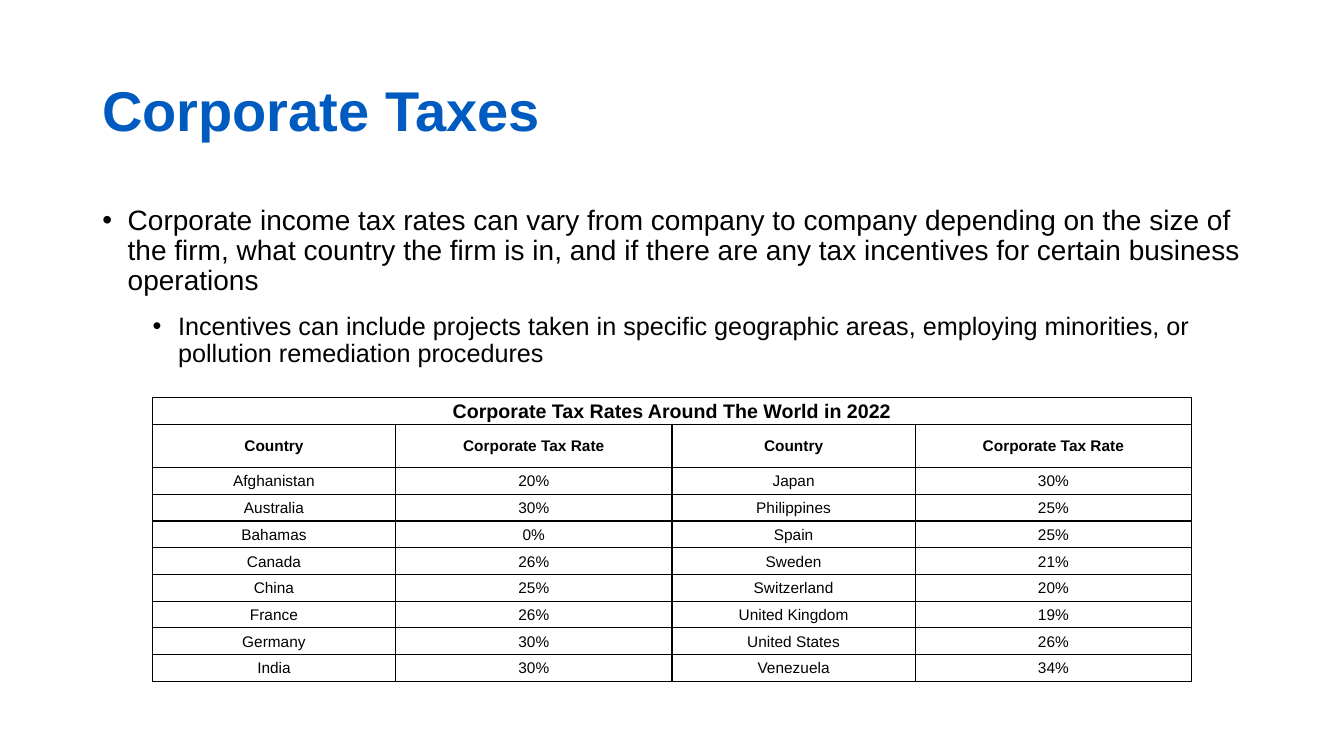
import pptx
import pptx.dml.color
import pptx.enum.text
import pptx.oxml
import pptx.oxml.ns
import pptx.util

Cm = pptx.util.Cm
Pt = pptx.util.Pt
ALIGN = pptx.enum.text.PP_ALIGN
ANCHOR = pptx.enum.text.MSO_ANCHOR
BLACK = "000000"
BLUE = "005BC0"

POINTS = [
    ("Corporate income tax rates can vary from company to company depending on the size of "
     "the firm, what country the firm is in, and if there are any tax incentives for certain "
     "business operations", 20),
    ("Incentives can include projects taken in specific geographic areas, employing "
     "minorities, or pollution remediation procedures", 18),
]
HEADING = "Corporate Tax Rates Around The World in 2022"
HEADS = ["Country", "Corporate Tax Rate"] * 2
RATES = [
    ["Afghanistan", "20%", "Japan", "30%"],
    ["Australia", "30%", "Philippines", "25%"],
    ["Bahamas", "0%", "Spain", "25%"],
    ["Canada", "26%", "Sweden", "21%"],
    ["China", "25%", "Switzerland", "20%"],
    ["France", "26%", "United Kingdom", "19%"],
    ["Germany", "30%", "United States", "26%"],
    ["India", "30%", "Venezuela", "34%"],
]


def color(code):
    """Return the colour for a hex string."""
    return pptx.dml.color.RGBColor.from_string(code)


def write(para, text, size=11, bold=False, tint=BLACK, align=ALIGN.LEFT, lead=1.0, before=0):
    """Put formatted text into a paragraph."""
    para.alignment = align
    para.line_spacing = lead
    para.space_before = Pt(before)
    run = para.add_run()
    run.text = text
    run.font.name = "Arial"
    run.font.size = Pt(size)
    run.font.bold = bold
    run.font.color.rgb = color(tint)


def frame(slide, box, anchor):
    """Add a wrapping text box and return its text frame."""
    area = slide.shapes.add_textbox(*map(Cm, box)).text_frame
    area.word_wrap = True
    area.vertical_anchor = anchor
    return area


def title(slide, box):
    """Place the slide title in the box."""
    area = frame(slide, box, ANCHOR.MIDDLE)
    write(area.paragraphs[0], "Corporate Taxes", size=40, bold=True, tint=BLUE, lead=0.9)


def bullet(para, level):
    """Give a paragraph a hanging bullet at its level."""
    para.level = level
    props = para._p.get_or_add_pPr()
    props.set("marL", str(Cm(0.64 + 1.27 * level)))
    props.set("indent", str(-Cm(0.64)))
    space = pptx.oxml.ns.nsdecls("a")
    props.append(pptx.oxml.parse_xml(f'<a:buFont {space} typeface="Arial"/>'))
    props.append(pptx.oxml.parse_xml(f'<a:buChar {space} char="•"/>'))


def body(slide, box):
    """Place the bullet points in the box."""
    area = frame(slide, box, ANCHOR.TOP)
    for level, (text, size) in enumerate(POINTS):
        para = area.add_paragraph() if level else area.paragraphs[0]
        write(para, text, size=size, lead=0.9, before=12)
        bullet(para, level)


def border(cell):
    """Draw a thin black line on every side of a cell."""
    props = cell._tc.get_or_add_tcPr()
    space = pptx.oxml.ns.nsdecls("a")
    for place, side in enumerate("LRTB"):
        line = pptx.oxml.parse_xml(
            f'<a:ln{side} {space} w="{Pt(1)}"><a:solidFill>'
            f'<a:srgbClr val="{BLACK}"/></a:solidFill></a:ln{side}>')
        props.insert(place, line)


def style(cell):
    """Set the margins, anchor, fill and border of a cell."""
    cell.margin_left = cell.margin_right = cell.margin_top = Cm(0.03)
    cell.margin_bottom = 0
    cell.vertical_anchor = ANCHOR.MIDDLE
    cell.fill.background()
    border(cell)


def rates(slide, box):
    """Place the table of tax rates in the box."""
    left, top, width, height = box
    rows = [[HEADING], HEADS] + RATES
    grid = slide.shapes.add_table(len(rows), len(HEADS), *map(Cm, box)).table
    grid.first_row = grid.horz_banding = False
    name = 6.13
    for place, col in enumerate(grid.columns):
        col.width = Cm(width / 2 - name if place % 2 else name)
    head = 1.09
    for place, row in enumerate(grid.rows):
        row.height = Cm(head if place == 1 else (height - head) / (len(rows) - 1))
        for cell in row.cells:
            style(cell)
    grid.cell(0, 0).merge(grid.cell(0, len(HEADS) - 1))
    for place, texts in enumerate(rows):
        for col, text in enumerate(texts):
            para = grid.cell(place, col).text_frame.paragraphs[0]
            write(para, text, size=11 if place else 14, bold=place < 2, align=ALIGN.CENTER)


def main():
    """Build and save the slide."""
    deck = pptx.Presentation()
    deck.slide_width = Cm(33.87)
    deck.slide_height = Cm(19.05)
    slide = deck.slides.add_slide(deck.slide_layouts[6])
    title(slide, (2.33, 1.01, 29.21, 3.68))
    body(slide, (2.33, 5.07, 29.21, 12.09))
    rates(slide, (3.84, 10.02, 26.19, 7.15))
    deck.save("out.pptx")


if __name__ == "__main__":
    main()
